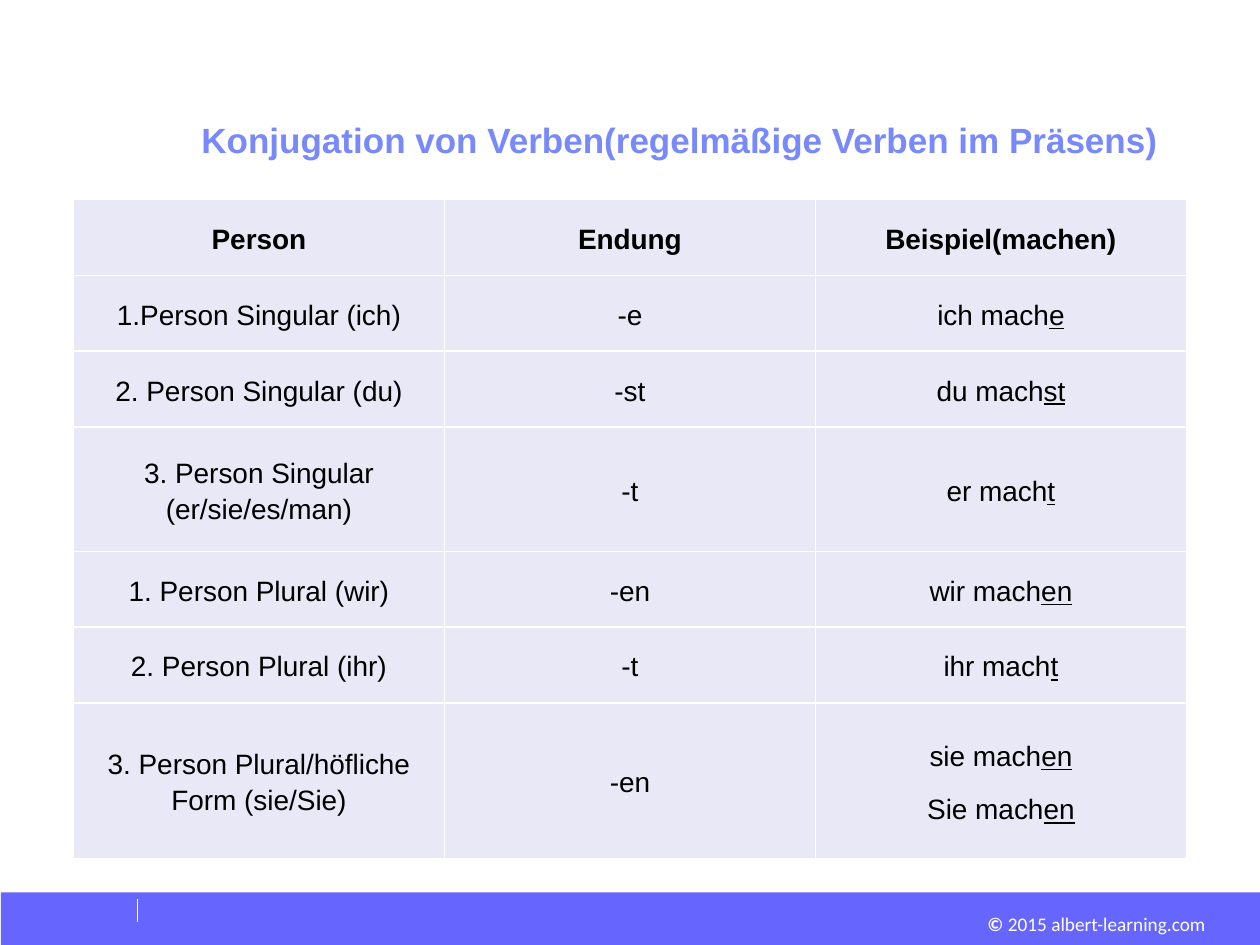
from dataclasses import dataclass

from lxml import etree
from pptx import Presentation, util as u
from pptx.dml import color
from pptx.enum import shapes, text
from pptx.oxml import ns

Pt = u.Pt


@dataclass(frozen=True)
class Theme:
    heading: str = "7889FB"
    band: str = "6666FF"
    light: str = "FFFFFF"
    ink: str = "000000"
    cell: str = "E8E8F6"
    body_font: str = "Arial"
    footer_font: str = "Calibri"
    heading_size: float = 20
    cell_size: float = 16
    footer_size: float = 11


THEME = Theme()
HEADER = ["Person", "Endung", "Beispiel(machen)"]
CONJUGATION = [
    ("1.Person Singular (ich)", "e", ["ich"]),
    ("2. Person Singular (du)", "st", ["du"]),
    ("3. Person Singular (er/sie/es/man)", "t", ["er"]),
    ("1. Person Plural (wir)", "en", ["wir"]),
    ("2. Person Plural (ihr)", "t", ["ihr"]),
    ("3. Person Plural/höfliche Form (sie/Sie)", "en", ["sie", "Sie"]),
]
COLUMN_WIDTH = 212
ROW_HEIGHTS = [43.5, 43.2, 43.2, 71.3, 43.2, 43.2, 89.3]


def rgb(value):
    return color.RGBColor.from_string(value)


def add_span(para, words, font, size, ink, bold=False, underline=False):
    span = para.add_run()
    span.text = words
    span.font.name = font
    span.font.size = Pt(size)
    span.font.color.rgb = rgb(ink)
    span.font.bold = bold
    span.font.underline = underline


def add_box(page, left, top, width, height, wrap):
    frame = page.shapes.add_textbox(Pt(left), Pt(top), Pt(width), Pt(height)).text_frame
    frame.word_wrap = wrap
    return frame


def add_footer(page):
    band = page.shapes.add_shape(
        shapes.MSO_SHAPE.RECTANGLE, Pt(0.5), Pt(510), Pt(719.5), Pt(30))
    band.shadow.inherit = False
    band.fill.solid()
    band.fill.fore_color.rgb = rgb(THEME.band)
    band.line.fill.background()

    divider = page.shapes.add_connector(
        shapes.MSO_CONNECTOR.STRAIGHT, Pt(78.5), Pt(514), Pt(78.5), Pt(527))
    divider.line.color.rgb = rgb(THEME.light)
    divider.line.width = Pt(0.75)
    etree.SubElement(divider.element.spPr, ns.qn("a:effectLst"))

    frame = add_box(page, 561, 521.5, 128, 13.5, False)
    frame.margin_left = frame.margin_right = frame.margin_top = frame.margin_bottom = 0
    para = frame.paragraphs[0]
    para.alignment = text.PP_ALIGN.RIGHT
    for words, bold in [("© ", True), ("2015 albert-learning.com", False)]:
        add_span(para, words, THEME.footer_font, THEME.footer_size, THEME.light, bold)


def add_heading(page, words):
    frame = add_box(page, -36, 67.5, 724.5, 28, True)
    frame.vertical_anchor = text.MSO_ANCHOR.MIDDLE
    para = frame.paragraphs[0]
    properties = para._p.get_or_add_pPr()
    properties.set("marL", str(Pt(162)))
    properties.set("indent", str(Pt(-18)))
    para.line_spacing = 0.9
    add_span(para, words, THEME.body_font, THEME.heading_size, THEME.heading, True)


def add_borders(cell):
    properties = cell._tc.get_or_add_tcPr()
    for side in ("lnL", "lnR", "lnT", "lnB"):
        line = etree.SubElement(properties, ns.qn(f"a:{side}"), w=str(Pt(1)))
        fill = etree.SubElement(line, ns.qn("a:solidFill"))
        etree.SubElement(fill, ns.qn("a:srgbClr"), val=THEME.light)


def fill_cell(cell, lines, bold=False):
    add_borders(cell)
    cell.fill.solid()
    cell.fill.fore_color.rgb = rgb(THEME.cell)
    cell.vertical_anchor = text.MSO_ANCHOR.MIDDLE
    cell.margin_left = cell.margin_right = Pt(5.4)
    cell.margin_top = cell.margin_bottom = Pt(2.7)
    frame = cell.text_frame
    for index, (stem, ending) in enumerate(lines):
        para = frame.add_paragraph() if index else frame.paragraphs[0]
        para.alignment = text.PP_ALIGN.CENTER
        para.line_spacing = 1.15
        para.space_after = Pt(10)
        for words, underline in [(stem, False), (ending, True)]:
            if words:
                add_span(para, words, THEME.body_font, THEME.cell_size, THEME.ink,
                         bold, underline)


def add_conjugation_table(page):
    table = page.shapes.add_table(
        len(ROW_HEIGHTS), len(HEADER), Pt(42), Pt(114),
        Pt(COLUMN_WIDTH * len(HEADER)), Pt(sum(ROW_HEIGHTS))).table
    for column in table.columns:
        column.width = Pt(COLUMN_WIDTH)
    for row, height in zip(table.rows, ROW_HEIGHTS):
        row.height = Pt(height)
    for column, words in enumerate(HEADER):
        fill_cell(table.cell(0, column), [(words, "")], bold=True)
    for row, (person, ending, pronouns) in enumerate(CONJUGATION, 1):
        examples = [(f"{pronoun} mach", ending) for pronoun in pronouns]
        for column, lines in enumerate([[(person, "")], [(f"-{ending}", "")], examples]):
            fill_cell(table.cell(row, column), lines)


def main():
    deck = Presentation()
    deck.slide_width, deck.slide_height = Pt(720), Pt(540)
    page = deck.slides.add_slide(deck.slide_layouts[6])
    add_footer(page)
    add_heading(page, "Konjugation von Verben(regelmäßige Verben im Präsens)")
    add_conjugation_table(page)
    deck.save("out.pptx")


if __name__ == "__main__":
    main()
